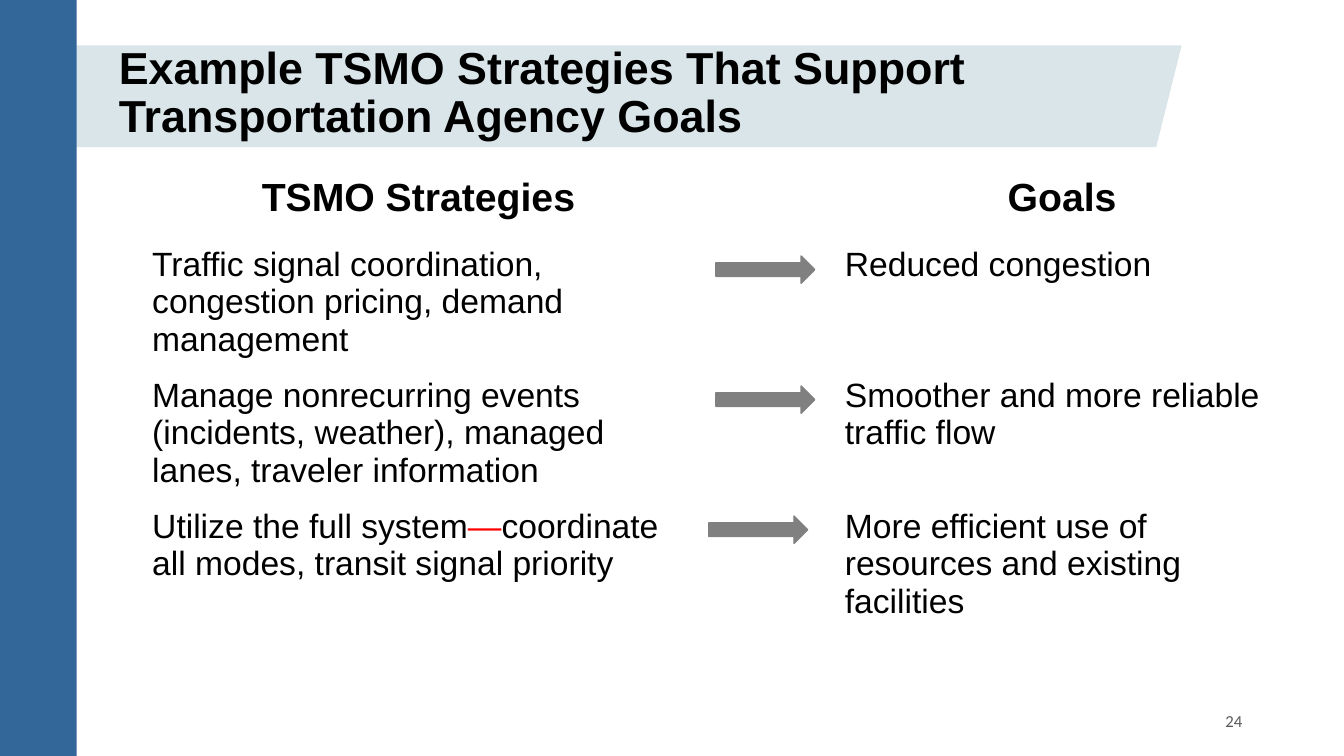
from pptx import Presentation
from pptx.dml.color import RGBColor
from pptx.enum.shapes import MSO_SHAPE
from pptx.enum.text import MSO_ANCHOR, PP_ALIGN
from pptx.util import Inches, Pt

BLACK = RGBColor(0x00, 0x00, 0x00)
RED = RGBColor(0xFF, 0x00, 0x00)
ARROW_GRAY = RGBColor(0x80, 0x80, 0x80)
NUMBER_GRAY = RGBColor(0x59, 0x59, 0x59)
BANNER_BLUE = RGBColor(0xDA, 0xE5, 0xEA)
SIDEBAR_BLUE = RGBColor(0x33, 0x66, 0x99)

RECTANGLE = MSO_SHAPE.RECTANGLE
PARALLELOGRAM = MSO_SHAPE.PARALLELOGRAM
RIGHT_ARROW = MSO_SHAPE.RIGHT_ARROW
LEFT, CENTER, RIGHT = PP_ALIGN.LEFT, PP_ALIGN.CENTER, PP_ALIGN.RIGHT
TOP, MIDDLE = MSO_ANCHOR.TOP, MSO_ANCHOR.MIDDLE

# The slide is a grid of square cells, 133.3 columns by 75 rows.
COLUMNS, ROWS = 133.3, 75
CELL = Inches(0.1)

HEADER = ("TSMO Strategies", "", "Goals")
BODY = (
    ("Traffic signal coordination, congestion pricing, demand management",
     "", "Reduced congestion"),
    ("Manage nonrecurring events (incidents, weather), managed lanes, "
     "traveler information",
     "", "Smoother and more reliable traffic flow"),
    ((("Utilize the full system", BLACK), ("—", RED),
      ("coordinate all modes, transit signal priority", BLACK)),
     "", "More efficient use of resources and existing facilities"),
)
COLUMN_WIDTHS = (54.8, 13.9, 45.1)
ROW_HEIGHTS = (8.6, 12.3, 12.2, 12.1)
ARROW_LEFTS = (71, 71, 70.3)
ARROW_TOP, ARROW_PITCH = 25.4, 12.9


def grid(*counts):
    """Turn counts of grid cells into slide lengths."""
    return [round(count * CELL) for count in counts]


def write(frame, text, size=24, font="Arial", color=BLACK, bold=False,
          align=LEFT, spacing=None):
    """Fill a frame's first paragraph; text is a string or (text, colour) pairs."""
    para = frame.paragraphs[0]
    para.alignment = align
    para.line_spacing = spacing
    pieces = ((text, color),) if isinstance(text, str) else text
    for words, shade in pieces:
        span = para.add_run()
        span.text = words
        span.font.size = Pt(size)
        span.font.name = font
        span.font.bold = bold
        span.font.color.rgb = shade


class SlideBuilder:
    def __init__(self, deck):
        self.slide = deck.slides.add_slide(deck.slide_layouts[6])

    def shape(self, kind, place, fill, outlined=False):
        shape = self.slide.shapes.add_shape(kind, *grid(*place))
        shape.shadow.inherit = False
        shape.fill.solid()
        shape.fill.fore_color.rgb = fill
        if outlined:
            shape.line.color.rgb = fill
            shape.line.width = Pt(1)
        else:
            shape.line.fill.background()

    def text(self, place, words, **style):
        box = self.slide.shapes.add_textbox(*grid(*place))
        box.text_frame.word_wrap = True
        box.text_frame.vertical_anchor = MIDDLE
        write(box.text_frame, words, **style)

    def table(self, left, top, header, body):
        place = grid(left, top, sum(COLUMN_WIDTHS), sum(ROW_HEIGHTS))
        table = self.slide.shapes.add_table(
            len(ROW_HEIGHTS), len(COLUMN_WIDTHS), *place).table
        table.first_row = table.horz_banding = False
        for column, width in zip(table.columns, grid(*COLUMN_WIDTHS)):
            column.width = width
        for row, height in zip(table.rows, grid(*ROW_HEIGHTS)):
            row.height = height
        for row, texts in zip(table.rows, (header, *body)):
            is_header = texts is header
            style = dict(size=28, bold=True, align=CENTER) if is_header else {}
            for cell, words in zip(row.cells, texts):
                cell.fill.background()
                cell.vertical_anchor = MIDDLE if is_header else TOP
                if words:
                    write(cell.text_frame, words, **style)


def main():
    deck = Presentation()
    deck.slide_width, deck.slide_height = grid(COLUMNS, ROWS)
    page = SlideBuilder(deck)

    page.shape(PARALLELOGRAM, (2.4, 4.5, 114.8, 10.1), BANNER_BLUE)
    page.shape(RECTANGLE, (0, 0, 7.6, ROWS), SIDEBAR_BLUE)
    page.text((10.8, 4.2, 98.4, 10.3),
              "Example TSMO Strategies That Support Transportation Agency Goals",
              size=32, bold=True, spacing=0.9)
    page.table(14.1, 15.3, HEADER, BODY)
    for index, left in enumerate(ARROW_LEFTS):
        top = ARROW_TOP + index * ARROW_PITCH
        page.shape(RIGHT_ARROW, (left, top, 9.8, 2.7), ARROW_GRAY, outlined=True)
    page.text((94.2, 69.5, 30, 4), "24", size=12, font="Calibri",
              color=NUMBER_GRAY, align=RIGHT)

    deck.save("out.pptx")


if __name__ == "__main__":
    main()
